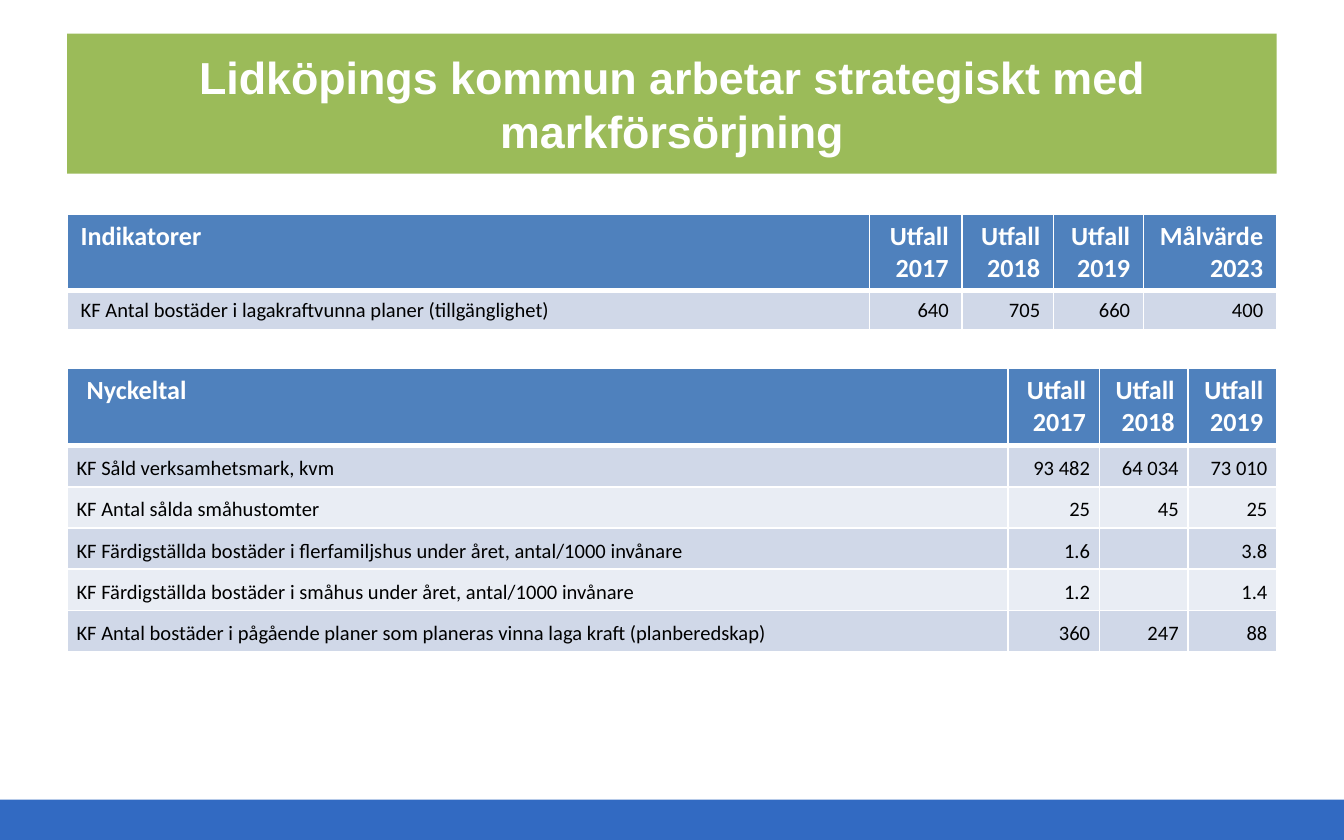
from lxml import etree
from pptx import Presentation
from pptx.dml.color import RGBColor
from pptx.enum import shapes, text
from pptx.oxml import ns
from pptx.util import Pt

WHITE = RGBColor(0xFF, 0xFF, 0xFF)
BLACK = RGBColor(0, 0, 0)
GREEN = RGBColor(0x9B, 0xBB, 0x59)
FOOTER_BLUE = RGBColor(0x32, 0x6A, 0xC2)
HEADER_BLUE = RGBColor(0x4F, 0x81, 0xBD)
BANDS = [RGBColor(0xD0, 0xD8, 0xE8), RGBColor(0xE9, 0xED, 0xF4)]

TITLE = "Lidköpings kommun arbetar strategiskt med markförsörjning"
LEFT, WIDTH = 36, 648
HEADER_HEIGHT = 41.4

TABLES = [
    {
        "top": 114.5,
        "cols": [429.8, 49.7, 49, 48.2, 71.3],
        "row_height": 20.6,
        "header_margins": (7.2, 3.6, 7.2, 3.6),
        "body_margins": (7.2, 3.6, 7.2, 3.6),
        "anchor": text.MSO_ANCHOR.TOP,
        "rows": [
            ["Indikatorer", "Utfall 2017", "Utfall 2018", "Utfall 2019", "Målvärde 2023"],
            ["KF Antal bostäder i lagakraftvunna planer (tillgänglighet)", "640", "705", "660", "400"],
        ],
    },
    {
        "top": 197.3,
        "cols": [504, 49, 47.5, 47.5],
        "row_height": 22,
        "header_margins": (10.4, 3.6, 7.2, 3.6),
        "body_margins": (5, 5.6, 5, 2.9),
        "anchor": text.MSO_ANCHOR.MIDDLE,
        "rows": [
            ["Nyckeltal", "Utfall 2017", "Utfall 2018", "Utfall 2019"],
            ["KF Såld verksamhetsmark, kvm", "93 482", "64 034", "73 010"],
            ["KF Antal sålda småhustomter", "25", "45", "25"],
            ["KF Färdigställda bostäder i flerfamiljshus under året, antal/1000 invånare", "1.6", "", "3.8"],
            ["KF Färdigställda bostäder i småhus under året, antal/1000 invånare", "1.2", "", "1.4"],
            ["KF Antal bostäder i pågående planer som planeras vinna laga kraft (planberedskap)",
             "360", "247", "88"],
        ],
    },
]


def write(tf, content, size=11, font="Calibri", color=BLACK, bold=False, align=text.PP_ALIGN.LEFT):
    tf.word_wrap = True
    p = tf.paragraphs[0]
    p.alignment = align
    if not content:
        p._p.get_or_add_endParaRPr().set("sz", str(size * 100))
        return
    r = p.add_run()
    r.text = content
    r.font.size = Pt(size)
    r.font.name = font
    r.font.bold = bold
    r.font.color.rgb = color


def add_bar(s, left, top, width, height, color):
    sp = s.shapes.add_shape(shapes.MSO_SHAPE.RECTANGLE, Pt(left), Pt(top), Pt(width), Pt(height))
    sp.shadow.inherit = False
    sp.fill.solid()
    sp.fill.fore_color.rgb = color
    sp.line.fill.background()
    return sp


def set_borders(cell, top, bottom):
    tcPr = cell._tc.get_or_add_tcPr()
    for i, (side, width) in enumerate([("lnL", 1), ("lnR", 1), ("lnT", top), ("lnB", bottom)]):
        ln = etree.Element(ns.qn(f"a:{side}"), w=str(Pt(width)))
        fill = etree.SubElement(ln, ns.qn("a:solidFill"))
        etree.SubElement(fill, ns.qn("a:srgbClr"), val=str(WHITE))
        tcPr.insert(i, ln)


def add_table(s, data):
    rows, cols = data["rows"], data["cols"]
    height = HEADER_HEIGHT + data["row_height"] * (len(rows) - 1)
    frame = s.shapes.add_table(len(rows), len(cols), Pt(LEFT), Pt(data["top"]), Pt(WIDTH), Pt(height))
    table = frame.table
    table.horz_banding = False
    for column, width in zip(table.columns, cols):
        column.width = Pt(width)
    for i, row in enumerate(rows):
        header = i == 0
        table.rows[i].height = Pt(HEADER_HEIGHT if header else data["row_height"])
        margins = data["header_margins" if header else "body_margins"]
        for j, content in enumerate(row):
            cell = table.cell(i, j)
            left, top, right, bottom = map(Pt, margins)
            cell.margin_left = left if j == 0 else right
            cell.margin_top, cell.margin_right, cell.margin_bottom = top, right, bottom
            cell.vertical_anchor = text.MSO_ANCHOR.TOP if header else data["anchor"]
            cell.fill.solid()
            cell.fill.fore_color.rgb = HEADER_BLUE if header else BANDS[(i - 1) % 2]
            set_borders(cell, top=3 if i == 1 else 1, bottom=3 if header else 1)
            write(cell.text_frame, content, size=14 if header else 11, bold=header,
                  color=WHITE if header else BLACK,
                  align=text.PP_ALIGN.RIGHT if j else text.PP_ALIGN.LEFT)


def main():
    prs = Presentation()
    prs.slide_width, prs.slide_height = Pt(720), Pt(450)
    s = prs.slides.add_slide(prs.slide_layouts[6])
    add_bar(s, 0, 428.4, 720, 21.6, FOOTER_BLUE)
    title = add_bar(s, LEFT, 18, WIDTH, 75, GREEN)
    title.text_frame.vertical_anchor = text.MSO_ANCHOR.MIDDLE
    write(title.text_frame, TITLE, size=24, font="Arial", color=WHITE, bold=True,
          align=text.PP_ALIGN.CENTER)
    for data in TABLES:
        add_table(s, data)
    prs.save("out.pptx")


if __name__ == "__main__":
    main()
